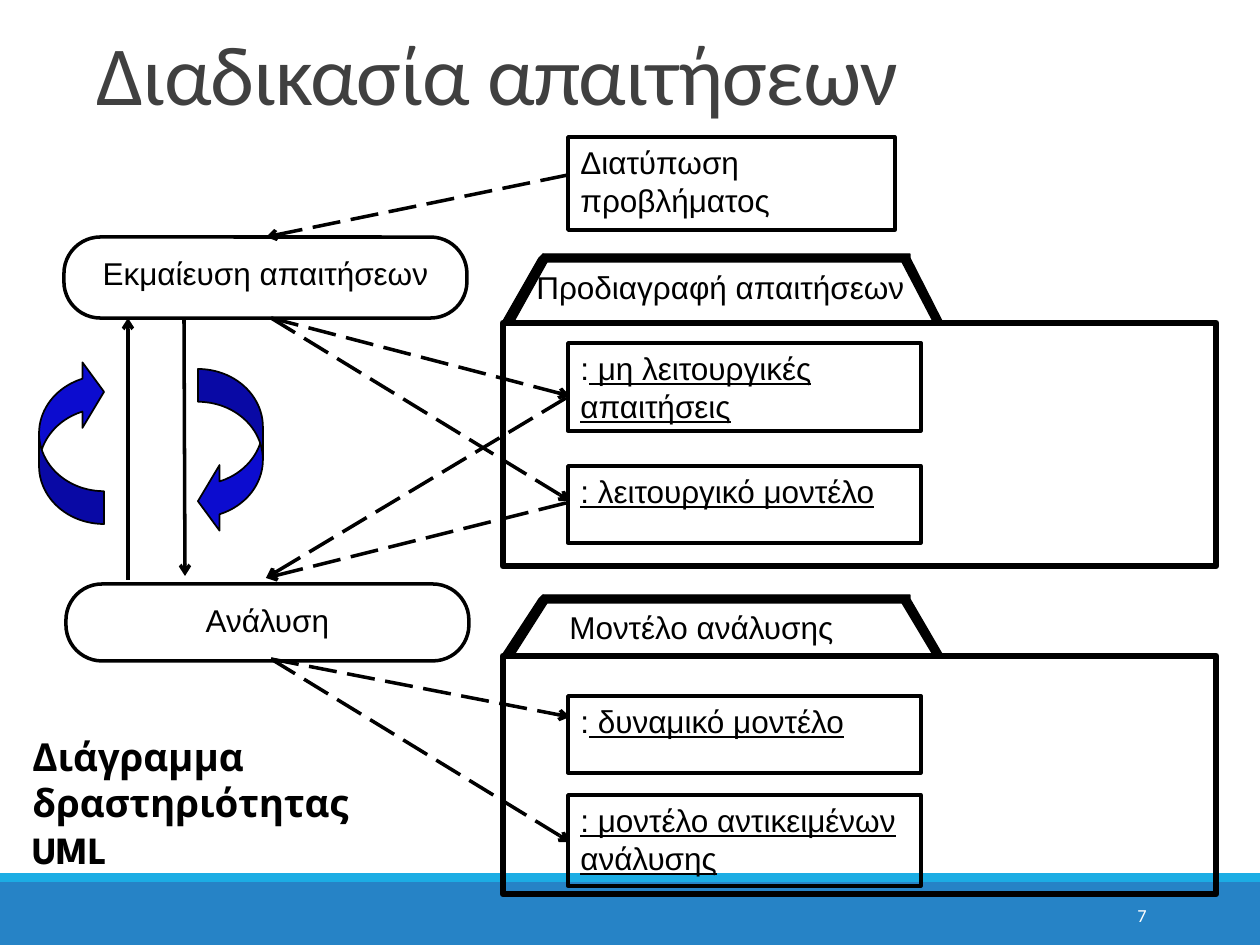
from lxml import etree
from pptx import Presentation
from pptx.dml.color import RGBColor
from pptx.enum.dml import MSO_LINE
from pptx.enum.shapes import MSO_CONNECTOR, MSO_SHAPE
from pptx.enum.text import MSO_ANCHOR, PP_ALIGN
from pptx.oxml.ns import qn
from pptx.util import Emu, Pt

EMU_PER_PX = 914400 / 126
BLACK = RGBColor(0x00, 0x00, 0x00)
WHITE = RGBColor(0xFF, 0xFF, 0xFF)
TITLE_GRAY = RGBColor(0x40, 0x40, 0x40)
FOOTER_BLUE = RGBColor(0x26, 0x83, 0xC6)
STRIPE_BLUE = RGBColor(0x1C, 0xAD, 0xE4)
ARROW_BLUE = RGBColor(0x0C, 0x0C, 0xCF)
RECTANGLE = MSO_SHAPE.RECTANGLE
ROUNDED = MSO_SHAPE.ROUNDED_RECTANGLE
CURVED_ARROW = MSO_SHAPE.CURVED_LEFT_ARROW
STRAIGHT = MSO_CONNECTOR.STRAIGHT
LONG_DASH = MSO_LINE.LONG_DASH
LEFT, CENTER, RIGHT = PP_ALIGN.LEFT, PP_ALIGN.CENTER, PP_ALIGN.RIGHT
TOP, MIDDLE, BOTTOM = MSO_ANCHOR.TOP, MSO_ANCHOR.MIDDLE, MSO_ANCHOR.BOTTOM


def px(value):
    return Emu(round(value * EMU_PER_PX))


def style_shape(shape, fill=None, line_width=None):
    shape.shadow.inherit = False
    if fill is None:
        shape.fill.background()
    else:
        shape.fill.solid()
        shape.fill.fore_color.rgb = fill
    if line_width is None:
        shape.line.fill.background()
    else:
        shape.line.color.rgb = BLACK
        shape.line.width = Pt(line_width)


def write_text(shape, runs, align=LEFT, anchor=TOP, size=18, font="Arial",
               color=BLACK, bold=False, wrap=True):
    frame = shape.text_frame
    frame.word_wrap = wrap
    frame.vertical_anchor = anchor
    paragraph = frame.paragraphs[0]
    paragraph.alignment = align
    for text, underlined in runs:
        run = paragraph.add_run()
        run.text = text
        run.font.size = Pt(size)
        run.font.name = font
        run.font.color.rgb = color
        run.font.bold = bold
        run.font.underline = underlined
    return paragraph


def add_box(slide, bounds, kind=RECTANGLE, fill=None, line_width=None):
    shape = slide.shapes.add_shape(kind, *map(px, bounds))
    style_shape(shape, fill, line_width)
    return shape


def add_label(slide, bounds, text, **style):
    label = slide.shapes.add_textbox(*map(px, bounds))
    return write_text(label, [(text, False)], **style)


def add_object(slide, bounds, runs):
    write_text(add_box(slide, bounds, line_width=2), runs)


def add_activity(slide, bounds, text, corner):
    shape = add_box(slide, bounds, ROUNDED, line_width=2)
    shape.adjustments[0] = corner
    write_text(shape, [(text, False)], align=CENTER)


def add_arrow(slide, start, end, dashed=True):
    connector = slide.shapes.add_connector(STRAIGHT, *map(px, start + end))
    connector.line.color.rgb = BLACK
    connector.line.width = Pt(2)
    if dashed:
        connector.line.dash_style = LONG_DASH
    properties = connector._element.spPr
    tail = etree.SubElement(properties.find(qn("a:ln")), qn("a:tailEnd"))
    tail.set("type", "arrow")
    etree.SubElement(properties, qn("a:effectLst"))


def add_outline(slide, points):
    builder = slide.shapes.build_freeform(*points[0], scale=EMU_PER_PX)
    builder.add_line_segments(points[1:], close=True)
    style_shape(builder.convert_to_shape(), BLACK, 0.75)


def add_package(slide, tab_top, body_top, body_height):
    add_box(slide, (503, body_top, 713, body_height), line_width=3.88)
    upper, lower = tab_top + 4, tab_top + 8
    base = body_top + 2
    edge = base - 4
    add_outline(slide, [(503, edge), (512, base), (547, lower),
                        (543, tab_top), (539, upper)])
    add_outline(slide, [(543, tab_top), (543, lower), (906, lower),
                        (910, upper), (910, tab_top)])
    add_outline(slide, [(910, upper), (902, lower), (935, base),
                        (946, base), (942, edge)])


def add_cycle_arrow(slide, left, top, rotation):
    shape = add_box(slide, (left, top, 65, 165), CURVED_ARROW, ARROW_BLUE, 1)
    for index, value in enumerate((0.505, 1.009, 0.333)):
        shape.adjustments[index] = value
    shape.rotation = rotation


def add_frame(slide):
    add_box(slide, (0, 882, 1260, 63), fill=FOOTER_BLUE)
    add_box(slide, (0, 873, 1260, 9), fill=STRIPE_BLUE)
    title = add_label(slide, (84, 19, 1040, 110), "Διαδικασία απαιτήσεων",
                      anchor=BOTTOM, size=48, font="Calibri", color=TITLE_GRAY)
    title.line_spacing = 0.85
    title.runs[0].font._element.set("spc", "-50")


def main():
    presentation = Presentation()
    presentation.slide_width = px(1260)
    presentation.slide_height = px(945)
    slide = presentation.slides.add_slide(presentation.slide_layouts[6])

    add_frame(slide)
    add_package(slide, 595, 656, 238)
    add_package(slide, 254, 323, 243)

    add_activity(slide, (64, 237, 403, 81), "Εκμαίευση απαιτήσεων", 0.45)
    add_activity(slide, (66, 584, 403, 77), "Ανάλυση", 0.47)

    add_object(slide, (568, 137, 327, 93), [("Διατύπωση προβλήματος", False)])
    add_object(slide, (568, 343, 353, 88),
               [(":", False), (" μη λειτουργικές απαιτήσεις", True)])
    add_object(slide, (568, 466, 353, 77), [(": λειτουργικό μοντέλο", True)])
    add_object(slide, (568, 696, 353, 77),
               [(":", False), (" δυναμικό μοντέλο", True)])
    add_object(slide, (568, 795, 353, 91),
               [(": μοντέλο αντικειμένων ανάλυσης", True)])

    elicitation_out, analysis_in, analysis_out = (271, 318), (266, 578), (271, 659)
    add_arrow(slide, (568, 175), (266, 237))
    add_arrow(slide, elicitation_out, (570, 396))
    add_arrow(slide, elicitation_out, (570, 501))
    add_arrow(slide, (566, 398), analysis_in)
    add_arrow(slide, (566, 503), analysis_in)
    add_arrow(slide, analysis_out, (570, 717))
    add_arrow(slide, analysis_out, (570, 842))
    add_arrow(slide, (184, 318), (185, 576), dashed=False)
    add_arrow(slide, (128, 580), (128, 318), dashed=False)
    add_cycle_arrow(slide, 198, 369, 0)
    add_cycle_arrow(slide, 39, 359, 180)

    add_label(slide, (20, 727, 401, 151), "Διάγραμμα δραστηριότητας UML",
              size=22, font="League Spartan", bold=True)
    add_label(slide, (524, 262, 393, 50), "Προδιαγραφή απαιτήσεων", wrap=False)
    add_label(slide, (557, 602, 291, 50), "Μοντέλο ανάλυσης", wrap=False)
    add_label(slide, (1023, 890, 136, 50), "7", align=RIGHT, anchor=MIDDLE,
              size=10.5, font="Calibri", color=WHITE)

    presentation.save("out.pptx")


if __name__ == "__main__":
    main()
